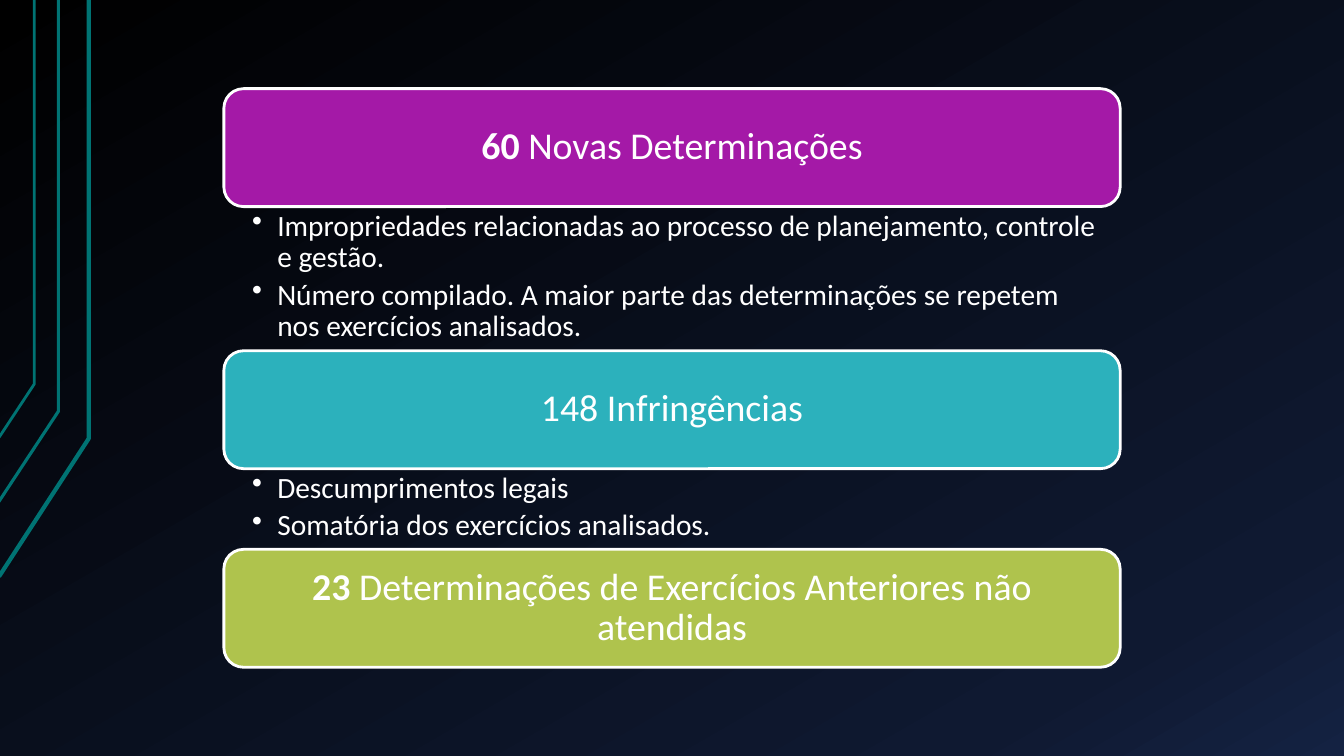
"""Build a slide of three headed findings on a dark gradient with angled lines."""
from copy import deepcopy

from lxml import etree
from pptx import Presentation
from pptx import util as u
from pptx.dml.color import RGBColor
from pptx.enum import shapes, text
from pptx.oxml.ns import qn

WHITE = RGBColor(0xFF, 0xFF, 0xFF)
TEAL = RGBColor(0x00, 0x73, 0x73)
PURPLE = RGBColor(0xA4, 0x19, 0xA7)
CYAN = RGBColor(0x2C, 0xB1, 0xBC)
OLIVE = RGBColor(0xAF, 0xC3, 0x4D)
BLACK = RGBColor(0x00, 0x00, 0x00)
NAVY = RGBColor(0x0F, 0x19, 0x31)
BLUE = RGBColor(0x14, 0x22, 0x42)

LEFT, WIDTH, HEADING_HEIGHT = 2.22, 8.89, 1.17
FIRST_TOP = 0.88


def set_frame(frame, left, top, right, bottom):
    """Wrap the frame's text and set its insets in inches."""
    frame.word_wrap = True
    frame.margin_left, frame.margin_top = u.Inches(left), u.Inches(top)
    frame.margin_right, frame.margin_bottom = u.Inches(right), u.Inches(bottom)


def style_paragraph(paragraph, size, alignment):
    """Set the shared look of a paragraph."""
    paragraph.alignment = alignment
    paragraph.line_spacing = 0.9
    paragraph.font.name = "Calibri"
    paragraph.font.size = u.Pt(size)
    paragraph.font.color.rgb = WHITE


presentation = Presentation()
presentation.slide_width = u.Inches(13.33)
presentation.slide_height = u.Inches(7.5)
slide = presentation.slides.add_slide(presentation.slide_layouts[6])

background = slide.background.fill
background.gradient()
background.gradient_angle = 300
stop_list = slide.element.find(".//" + qn("a:gsLst"))
stop_list.append(deepcopy(stop_list[-1]))
stops = [(0, BLACK), (0.85, NAVY), (1, BLUE)]
for stop, (position, color) in zip(background.gradient_stops, stops):
    stop.position = position
    stop.color.rgb = color

angled_lines = [
    ((-0.01, 5.72), (0.88, 4.35), 3),
    ((-0.02, 4.99), (0.58, 4.08), 2.25),
    ((-0.01, 4.34), (0.34, 3.81), 2),
]
for start, bend, line_width in angled_lines:
    points = [(u.Inches(x), u.Inches(y)) for x, y in (start, bend, (bend[0], 0))]
    builder = slide.shapes.build_freeform(*points[0])
    builder.add_line_segments(points[1:], close=False)
    shape = builder.convert_to_shape()
    shape.shadow.inherit = False
    shape.fill.background()
    shape.line.color.rgb = TEAL
    shape.line.width = u.Pt(line_width)

findings = [
    (PURPLE, "60 ", "Novas Determinações", 1.43, [
        "Impropriedades relacionadas ao processo de planejamento, controle e gestão.",
        "Número compilado. A maior parte das determinações se repetem nos exercícios analisados.",
    ]),
    (CYAN, "", "148 Infringências", 0.8, [
        "Descumprimentos legais",
        "Somatória dos exercícios analisados.",
    ]),
    (OLIVE, "23 ", "Determinações de Exercícios Anteriores não atendidas", 0, []),
]
top = FIRST_TOP
for color, bold_number, title, details_height, details in findings:
    heading = slide.shapes.add_shape(
        shapes.MSO_SHAPE.ROUNDED_RECTANGLE,
        u.Inches(LEFT), u.Inches(top), u.Inches(WIDTH), u.Inches(HEADING_HEIGHT))
    heading.shadow.inherit = False
    heading.fill.solid()
    heading.fill.fore_color.rgb = color
    heading.line.color.rgb = WHITE
    heading.line.width = u.Pt(2)
    frame = heading.text_frame
    set_frame(frame, 0.11, 0.11, 0.11, 0.11)
    frame.vertical_anchor = text.MSO_ANCHOR.MIDDLE
    paragraph = frame.paragraphs[0]
    style_paragraph(paragraph, 27, text.PP_ALIGN.CENTER)
    if bold_number:
        run = paragraph.add_run()
        run.text = bold_number
        run.font.bold = True
    paragraph.add_run().text = title
    top += HEADING_HEIGHT

    if details:
        box = slide.shapes.add_textbox(
            u.Inches(LEFT), u.Inches(top), u.Inches(WIDTH), u.Inches(details_height))
        frame = box.text_frame
        set_frame(frame, 0.28, 0.04, 0.21, 0.04)
        frame.text = "\n".join(details)
        for paragraph in frame.paragraphs:
            style_paragraph(paragraph, 21, text.PP_ALIGN.LEFT)
            paragraph.space_after = u.Pt(4)
            properties = paragraph._p.get_or_add_pPr()
            properties.set("marL", str(u.Inches(0.25)))
            properties.set("indent", str(u.Inches(-0.25)))
            bullet = etree.Element(qn("a:buChar"), char="•")
            properties.find(qn("a:defRPr")).addprevious(bullet)
    top += details_height

presentation.save("out.pptx")
